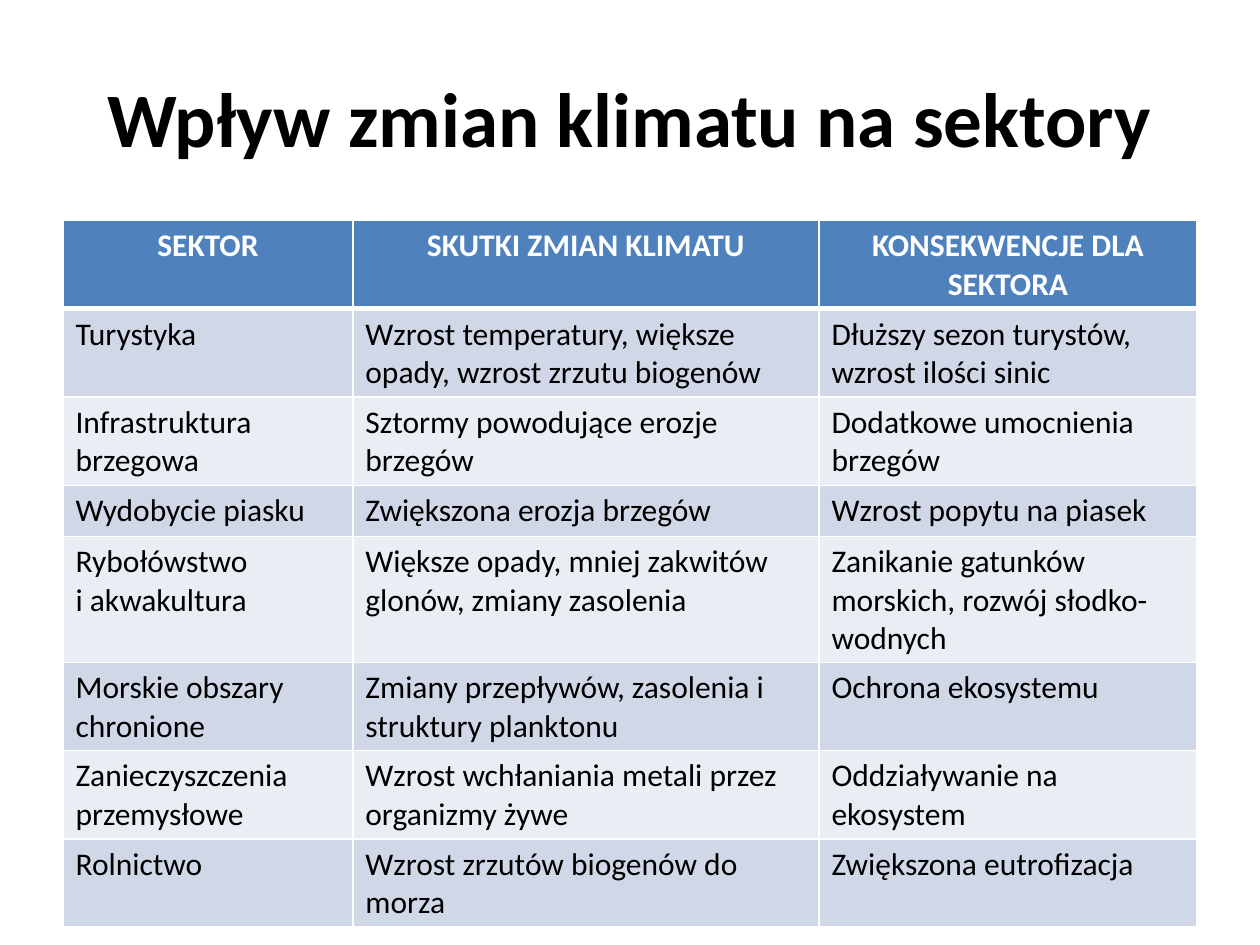
from lxml.etree import SubElement
from pptx import Presentation
from pptx.dml.color import RGBColor
from pptx.enum.text import MSO_ANCHOR, PP_ALIGN
from pptx.oxml.ns import qn
from pptx.util import Pt

FONT = "Calibri"
COLORS = {
    "text": "000000",
    "header_text": "FFFFFF",
    "header": "4F81BD",
    "odd_row": "D0D8E8",
    "even_row": "E9EDF4",
    "border": "FFFFFF",
}
COLUMN_WIDTHS = [165.6, 266.4, 216]
ROW_HEIGHT = 29.2
SECTORS = [
    ("SEKTOR", "SKUTKI ZMIAN KLIMATU", "KONSEKWENCJE DLA SEKTORA"),
    ("Turystyka", "Wzrost temperatury, większe opady, wzrost zrzutu biogenów",
     "Dłuższy sezon turystów, wzrost ilości sinic"),
    ("Infrastruktura brzegowa", "Sztormy powodujące erozje brzegów",
     "Dodatkowe umocnienia brzegów"),
    ("Wydobycie piasku", "Zwiększona erozja brzegów", "Wzrost popytu na piasek"),
    ("Rybołówstwo\ni akwakultura",
     "Większe opady, mniej zakwitów glonów, zmiany zasolenia",
     "Zanikanie gatunków morskich, rozwój słodko- wodnych"),
    ("Morskie obszary chronione",
     "Zmiany przepływów, zasolenia i struktury planktonu", "Ochrona ekosystemu"),
    ("Zanieczyszczenia\nprzemysłowe",
     "Wzrost wchłaniania metali przez organizmy żywe", "Oddziaływanie na ekosystem"),
    ("Rolnictwo", "Wzrost zrzutów biogenów do morza", "Zwiększona eutrofizacja"),
]


def format_text(frame, size, color, bold, align):
    for paragraph in frame.paragraphs:
        paragraph.alignment = align
        for run in paragraph.runs:
            run.font.name = FONT
            run.font.size = Pt(size)
            run.font.bold = bold
            run.font.color.rgb = RGBColor.from_string(COLORS[color])


def add_title(slide, wording):
    title = slide.shapes.add_textbox(Pt(36), Pt(21.6), Pt(648), Pt(90))
    frame = title.text_frame
    frame.word_wrap = True
    frame.vertical_anchor = MSO_ANCHOR.MIDDLE
    frame.text = wording
    format_text(frame, 44, "text", True, PP_ALIGN.CENTER)


def set_borders(cell, top, bottom):
    properties = cell._tc.get_or_add_tcPr()
    for side, width in (("L", 1), ("R", 1), ("T", top), ("B", bottom)):
        line = SubElement(properties, qn(f"a:ln{side}"), w=str(Pt(width)))
        fill = SubElement(line, qn("a:solidFill"))
        SubElement(fill, qn("a:srgbClr"), val=COLORS["border"])


def fill_cell(cell, wording, row):
    is_header = row == 0
    # A thick rule separates the header from the sectors
    set_borders(cell, top=3 if row == 1 else 1, bottom=3 if is_header else 1)
    band = "header" if is_header else "odd_row" if row % 2 else "even_row"
    cell.fill.solid()
    cell.fill.fore_color.rgb = RGBColor.from_string(COLORS[band])
    cell.text_frame.text = wording
    format_text(cell.text_frame, 18, "header_text" if is_header else "text",
                is_header, PP_ALIGN.CENTER if is_header else PP_ALIGN.LEFT)


def add_sector_table(slide):
    table = slide.shapes.add_table(
        len(SECTORS), len(COLUMN_WIDTHS), Pt(36), Pt(126),
        Pt(sum(COLUMN_WIDTHS)), Pt(ROW_HEIGHT * len(SECTORS))).table
    for column, width in zip(table.columns, COLUMN_WIDTHS):
        column.width = Pt(width)
    for row, sector in enumerate(SECTORS):
        table.rows[row].height = Pt(ROW_HEIGHT)
        for column, wording in enumerate(sector):
            fill_cell(table.cell(row, column), wording, row)


def main():
    presentation = Presentation()
    presentation.slide_width = Pt(720)
    presentation.slide_height = Pt(540)
    slide = presentation.slides.add_slide(presentation.slide_layouts[6])
    # Heading
    add_title(slide, "Wpływ zmian klimatu na sektory")
    # Effects and consequences by sector
    add_sector_table(slide)
    presentation.save("out.pptx")


if __name__ == "__main__":
    main()
